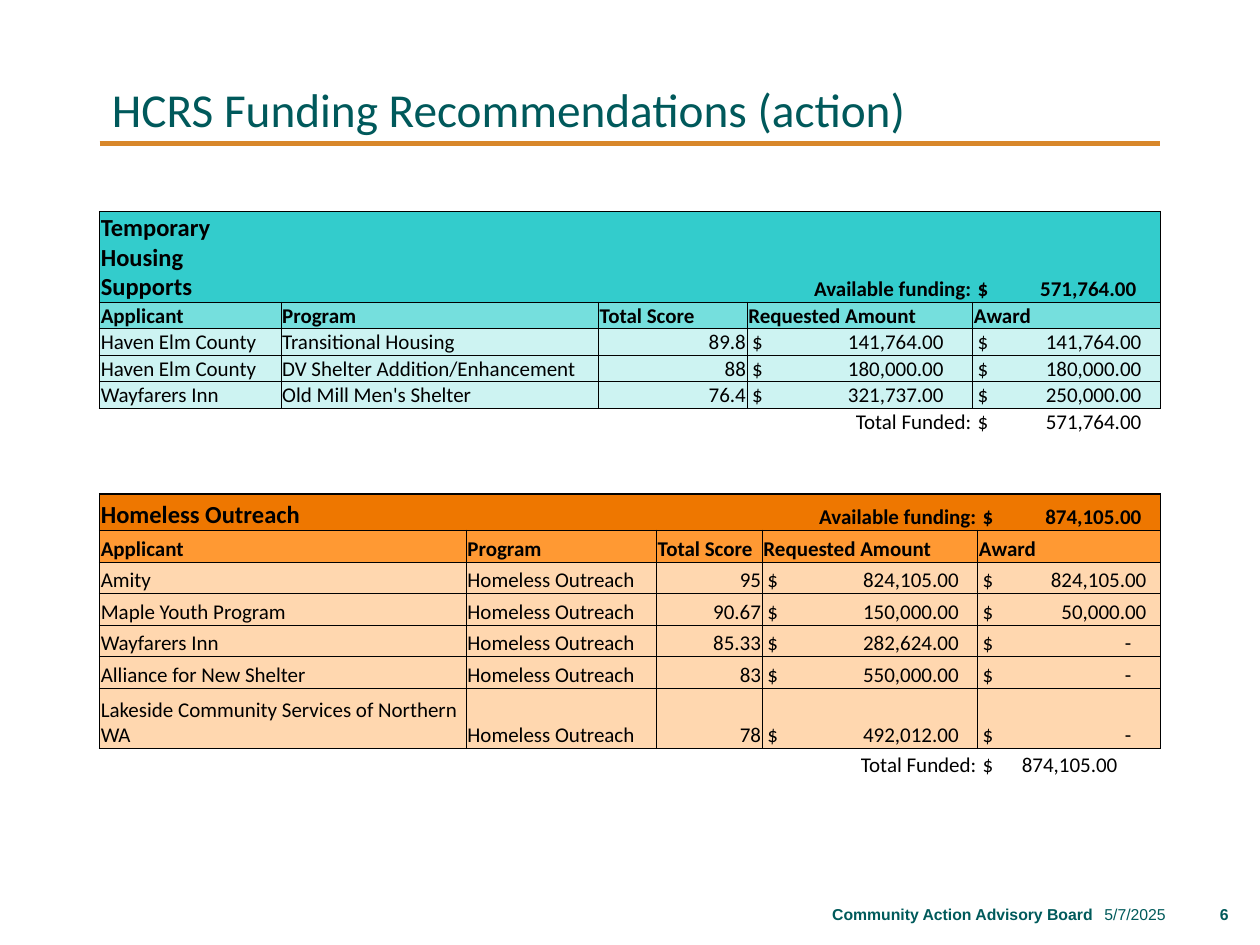
"""Build the slide of HCRS funding recommendations with its two award tables."""
from dataclasses import dataclass

import lxml.etree
import pptx
import pptx.dml.color
import pptx.enum.shapes
import pptx.enum.text
import pptx.oxml.ns
import pptx.util

Inches = pptx.util.Inches
Pt = pptx.util.Pt
qn = pptx.oxml.ns.qn
Align = pptx.enum.text.PP_ALIGN
Anchor = pptx.enum.text.MSO_ANCHOR


@dataclass(frozen=True)
class Theme:
    heading_font: str = "Calibri"
    footer_font: str = "Arial"
    title: str = "00595B"
    footer: str = "005A5B"
    rule: str = "D8872A"
    ink: str = "000000"
    title_size: float = 27
    section_size: float = 14
    body_size: float = 12
    footer_size: float = 9
    outer_line: float = 1
    inner_line: float = 0.5


THEME = Theme()
LEFT, WIDTH = 0.79, 8.42


@dataclass(frozen=True)
class TextStyle:
    font: str
    size: float
    color: str
    bold: bool = False
    align: Align = Align.LEFT


@dataclass(frozen=True)
class Label:
    text: str
    box: tuple[float, float, float, float]
    style: TextStyle
    anchor: Anchor = Anchor.MIDDLE
    line_spacing: float = 1.0


@dataclass(frozen=True)
class Money:
    amount: str
    right_edge: float


@dataclass(frozen=True)
class Palette:
    section: str
    header: str
    body: str


@dataclass(frozen=True)
class FundingTable:
    section: str
    top: float
    columns: tuple[float, ...]
    rows: tuple[float, ...]
    palette: Palette
    available: Money
    requested_edge: float
    award_edge: float
    applications: tuple[tuple[str, str, str, str, str], ...]
    total: Money


DASH_EDGE = 1.18
HEADINGS = ("Applicant", "Program", "Total Score", "Requested Amount", "Award")
OUTREACH = "Homeless Outreach"
TABLES = (
    FundingTable(
        "Temporary Housing Supports", 1.68, (1.44, 2.52, 1.18, 1.79, 1.49),
        (0.72,) + (0.21,) * 5, Palette("33CCCC", "75DFDD", "CDF3F2"),
        Money("571,764.00", 1.26), 1.52, 1.3,
        (("Haven Elm County", "Transitional Housing", "89.8", "141,764.00", "141,764.00"),
         ("Haven Elm County", "DV Shelter Addition/Enhancement", "88", "180,000.00", "180,000.00"),
         ("Wayfarers Inn", "Old Mill Men's Shelter", "76.4", "321,737.00", "250,000.00")),
        Money("571,764.00", 1.3)),
    FundingTable(
        OUTREACH, 3.92, (2.91, 1.51, 0.84, 1.71, 1.45),
        (0.29,) + (0.25,) * 5 + (0.48, 0.24), Palette("EE7700", "FF9933", "FFD7AF"),
        Money("874,105.00", 1.26), 1.52, 1.3,
        (("Amity", OUTREACH, "95", "824,105.00", "824,105.00"),
         ("Maple Youth Program", OUTREACH, "90.67", "150,000.00", "50,000.00"),
         ("Wayfarers Inn", OUTREACH, "85.33", "282,624.00", "-"),
         ("Alliance for New Shelter", OUTREACH, "83", "550,000.00", "-"),
         ("Lakeside Community Services of Northern WA", OUTREACH, "78", "492,012.00", "-")),
        Money("874,105.00", 1.07)),
)

FOOTER = TextStyle(THEME.footer_font, THEME.footer_size, THEME.footer, True, Align.RIGHT)
DATE = TextStyle(THEME.footer_font, THEME.footer_size, THEME.footer, False, Align.RIGHT)
LABELS = (
    Label("HCRS Funding Recommendations (action)", (LEFT, 0.4, WIDTH, 0.74),
          TextStyle(THEME.heading_font, THEME.title_size, THEME.title), Anchor.BOTTOM, 0.9),
    Label("5/7/2025", (8.56, 7.06, 0.79, 0.4), DATE),
    Label("Community Action Advisory Board", (2.5, 7.06, 6.27, 0.4), FOOTER),
    Label("6", (9.38, 7.06, 0.47, 0.4), FOOTER),
)


def rgb(color: str) -> pptx.dml.color.RGBColor:
    return pptx.dml.color.RGBColor.from_string(color)


def style_paragraph(paragraph, style: TextStyle) -> None:
    paragraph.alignment = style.align
    paragraph.font.name = style.font
    paragraph.font.size = Pt(style.size)
    paragraph.font.bold = style.bold
    paragraph.font.color.rgb = rgb(style.color)


def add_label(slide, label: Label) -> None:
    frame = slide.shapes.add_textbox(*map(Inches, label.box)).text_frame
    frame.word_wrap = True
    frame.vertical_anchor = label.anchor
    paragraph = frame.paragraphs[0]
    paragraph.text = label.text
    paragraph.line_spacing = label.line_spacing
    style_paragraph(paragraph, label.style)


def add_title_rule(slide) -> None:
    rule = slide.shapes.add_connector(
        pptx.enum.shapes.MSO_CONNECTOR.STRAIGHT,
        Inches(LEFT), Inches(1.14), Inches(LEFT + WIDTH), Inches(1.14))
    rule.line.color.rgb = rgb(THEME.rule)
    rule.line.width = Pt(3)
    lxml.etree.SubElement(rule._element.spPr, qn("a:effectLst"))


def border_widths(row: int, column: int, total_row: int, last_column: int) -> dict[str, float]:
    outer, inner = THEME.outer_line, THEME.inner_line
    if row == total_row:
        return {"L": 0, "R": 0, "T": outer, "B": 0}
    between = 0 if row == 0 else inner
    return {"L": outer if column == 0 else between,
            "R": outer if column == last_column else between,
            "T": outer if row <= 1 else inner,
            "B": outer if row in (0, total_row - 1) else inner}


def set_borders(cell, widths: dict[str, float]) -> None:
    properties = cell._tc.get_or_add_tcPr()
    for side, width in widths.items():
        line = lxml.etree.SubElement(properties, qn(f"a:ln{side}"), w=str(int(Pt(width))))
        if width:
            fill = lxml.etree.SubElement(line, qn("a:solidFill"))
            lxml.etree.SubElement(fill, qn("a:srgbClr"), val=THEME.ink)
        else:
            lxml.etree.SubElement(line, qn("a:noFill"))


def fill_cell(cell, content: str | Money, style: TextStyle, color: str | None) -> None:
    cell.margin_left = Inches(0.04 if isinstance(content, Money) else 0.01)
    cell.margin_right = cell.margin_top = Inches(0.01)
    cell.margin_bottom = 0
    cell.vertical_anchor = Anchor.BOTTOM
    paragraph = cell.text_frame.paragraphs[0]
    if isinstance(content, Money):
        paragraph.text = f"$\t{content.amount}"
        stops = lxml.etree.SubElement(paragraph._p.get_or_add_pPr(), qn("a:tabLst"))
        lxml.etree.SubElement(stops, qn("a:tab"), pos=str(Inches(content.right_edge)), algn="r")
    elif content:
        paragraph.text = content
    else:
        lxml.etree.SubElement(paragraph._p, qn("a:endParaRPr"), sz=str(int(style.size * 100)))
    style_paragraph(paragraph, style)
    if color:
        cell.fill.solid()
        cell.fill.fore_color.rgb = rgb(color)
    else:
        cell.fill.background()


def table_contents(funding: FundingTable) -> list[tuple]:
    rows = [(funding.section, "", "", "Available funding:", funding.available), HEADINGS]
    for applicant, program, score, requested, award in funding.applications:
        edge = DASH_EDGE if award == "-" else funding.award_edge
        rows.append((applicant, program, score,
                     Money(requested, funding.requested_edge), Money(award, edge)))
    return rows + [("", "", "", "Total Funded:", funding.total)]


def add_funding_table(slide, funding: FundingTable) -> None:
    contents = table_contents(funding)
    total_row, last_column = len(contents) - 1, len(HEADINGS) - 1
    table = slide.shapes.add_table(
        len(contents), len(HEADINGS), Inches(LEFT), Inches(funding.top),
        Inches(WIDTH), Inches(sum(funding.rows))).table
    table.first_row = table.horz_banding = False
    for column, width in zip(table.columns, funding.columns):
        column.width = Inches(width)
    for row, height in zip(table.rows, funding.rows):
        row.height = Inches(height)
    palette = funding.palette
    colors = [palette.section, palette.header, *[palette.body] * len(funding.applications), None]
    for row, values in enumerate(contents):
        for column, content in enumerate(values):
            is_score = column == 2 and 1 < row < total_row
            is_caption = column == 3 and row in (0, total_row)
            style = TextStyle(
                THEME.heading_font,
                THEME.section_size if row == column == 0 else THEME.body_size,
                THEME.ink, row <= 1, Align.RIGHT if is_score or is_caption else Align.LEFT)
            cell = table.cell(row, column)
            set_borders(cell, border_widths(row, column, total_row, last_column))
            fill_cell(cell, content, style, colors[row])


def main() -> None:
    presentation = pptx.Presentation()
    presentation.slide_width, presentation.slide_height = Inches(10), Inches(7.5)
    slide = presentation.slides.add_slide(presentation.slide_layouts[6])
    add_title_rule(slide)
    for label in LABELS:
        add_label(slide, label)
    for funding in TABLES:
        add_funding_table(slide, funding)
    presentation.save("out.pptx")


if __name__ == "__main__":
    main()
